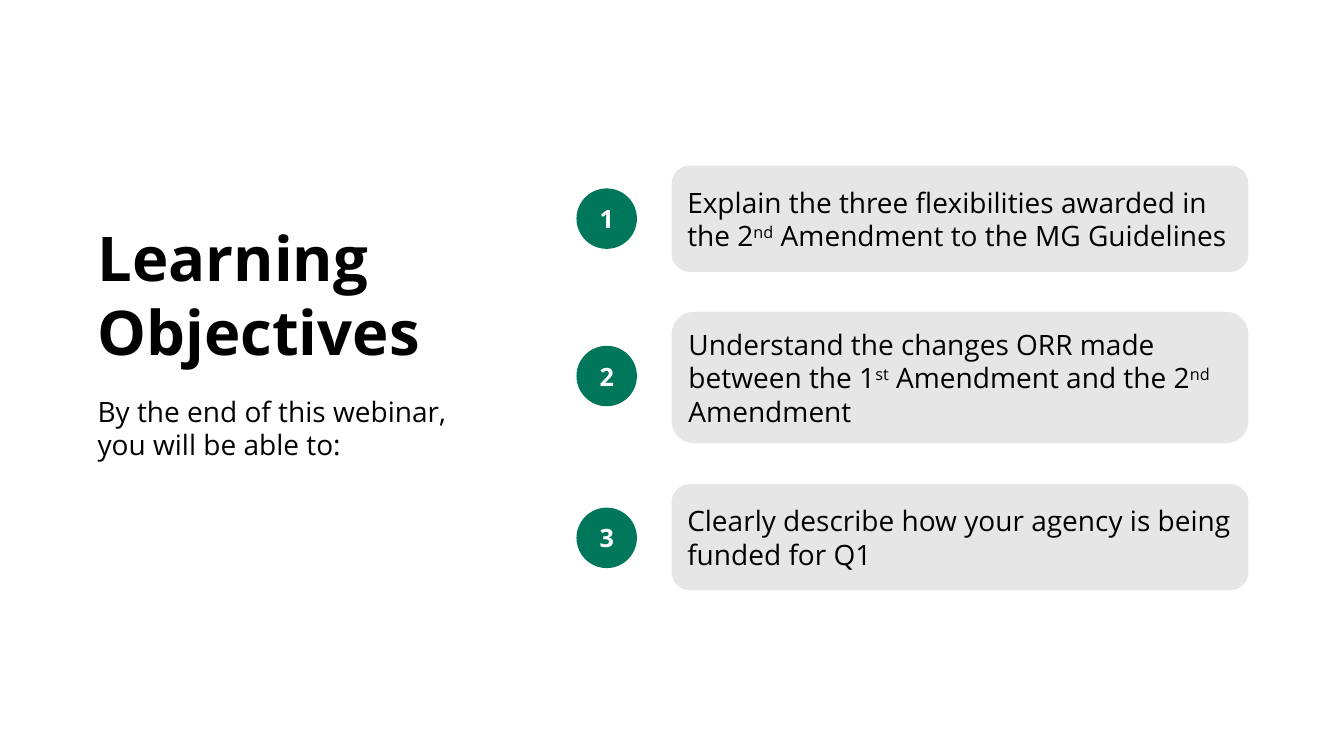
import pptx
import pptx.util
import pptx.dml.color
import pptx.enum.shapes
import pptx.enum.text

Pt = pptx.util.Pt
MSO_SHAPE = pptx.enum.shapes.MSO_SHAPE
PP_ALIGN = pptx.enum.text.PP_ALIGN
COLORS = {"text": "000000", "badge": "00765A", "card": "E7E6E6", "number": "FFFFFF"}


def rgb(name):
    return pptx.dml.color.RGBColor.from_string(COLORS[name])


def write(paragraph, text, size, color="text", bold=False):
    """Fill a paragraph; every second piece between ^ marks is superscript."""
    font = paragraph.font
    font.name, font.size, font.bold = "Open Sans", Pt(size), bold
    font.color.rgb = rgb(color)
    for index, piece in enumerate(text.split("^")):
        run = paragraph.add_run()
        run.text = piece
        if index % 2:
            run.font._element.set("baseline", "30000")


presentation = pptx.Presentation()
presentation.slide_width, presentation.slide_height = Pt(960), Pt(540)
slide = presentation.slides.add_slide(presentation.slide_layouts[6])

title = slide.shapes.add_textbox(Pt(62.6), Pt(153.4), Pt(278.6), Pt(113.8)).text_frame
title.word_wrap = True
write(title.paragraphs[0], "Learning", 44, bold=True)
write(title.add_paragraph(), "Objectives", 44, bold=True)

intro = slide.shapes.add_textbox(Pt(62.6), Pt(277.9), Pt(300.2), Pt(55.4)).text_frame
intro.word_wrap = True
write(intro.paragraphs[0], "By the end of this webinar, you will be able to:", 20)

# badge top, card top, card height, objective
objectives = [
    (134.6, 118.8, 74.9,
     "Explain the three flexibilities awarded in the 2^nd^ Amendment to the MG Guidelines"),
    (247, 223.2, 92.9,
     "Understand the changes ORR made between the 1^st^ Amendment and the 2^nd^ Amendment"),
    (362.6, 346.3, 74.9,
     "Clearly describe how your agency is being funded for Q1"),
]
for number, (badge_top, card_top, card_height, objective) in enumerate(objectives, 1):
    badge = slide.shapes.add_shape(
        MSO_SHAPE.OVAL, Pt(411.8), Pt(badge_top), Pt(43.2), Pt(43.2))
    badge.line.fill.background()
    card = slide.shapes.add_shape(
        MSO_SHAPE.ROUNDED_RECTANGLE, Pt(480.2), Pt(card_top), Pt(411.1), Pt(card_height))
    card.line.color.rgb = rgb("card")
    card.line.width = Pt(1)

    for shape, fill in ((badge, "badge"), (card, "card")):
        shape.shadow.inherit = False
        shape.fill.solid()
        shape.fill.fore_color.rgb = rgb(fill)
        shape.text_frame.word_wrap = True
        shape.text_frame.vertical_anchor = pptx.enum.text.MSO_ANCHOR.MIDDLE

    badge_label = badge.text_frame.paragraphs[0]
    badge_label.alignment = PP_ALIGN.CENTER
    write(badge_label, str(number), 18, "number", bold=True)
    card_text = card.text_frame.paragraphs[0]
    card_text.alignment = PP_ALIGN.LEFT
    write(card_text, objective, 20)

presentation.save("out.pptx")
